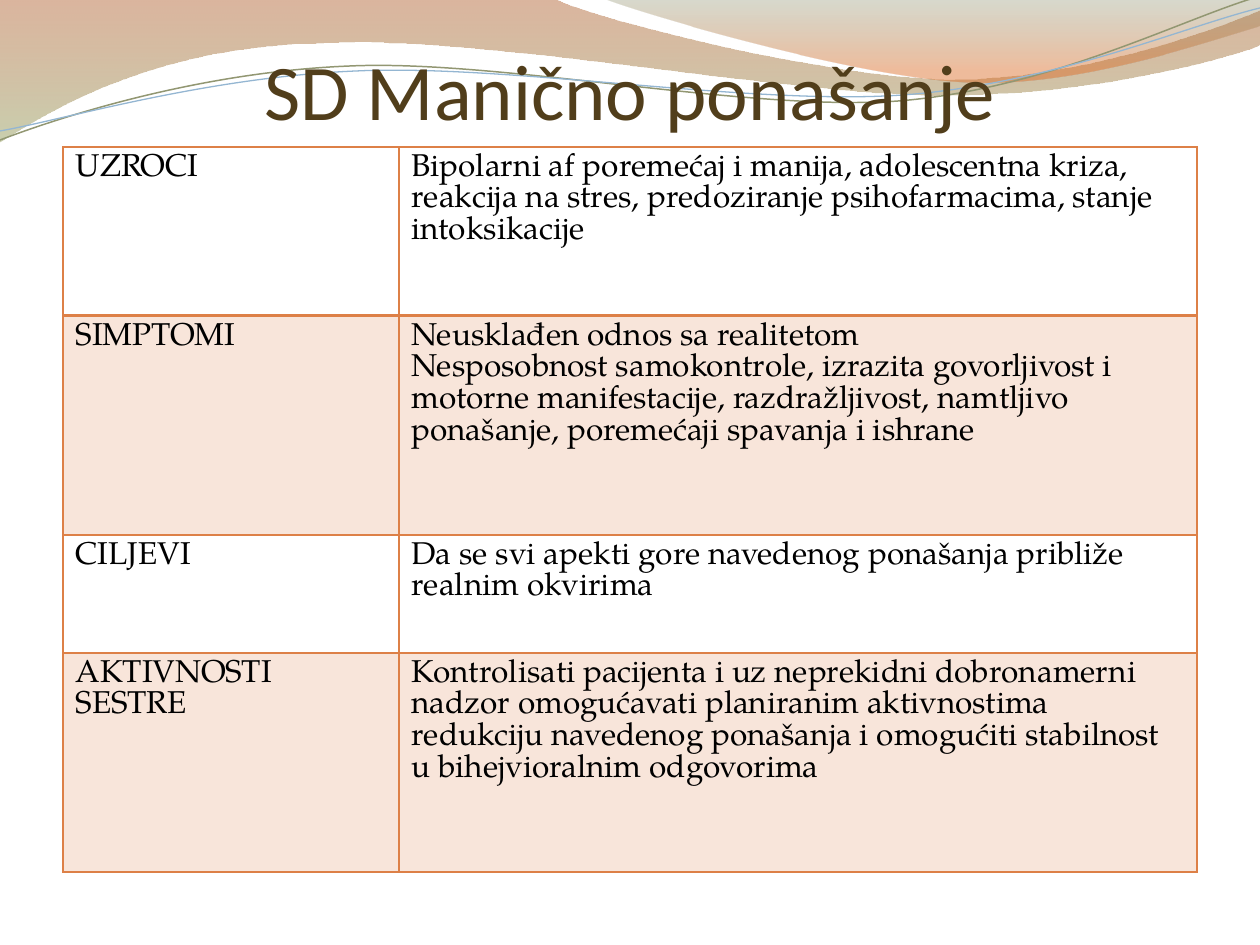
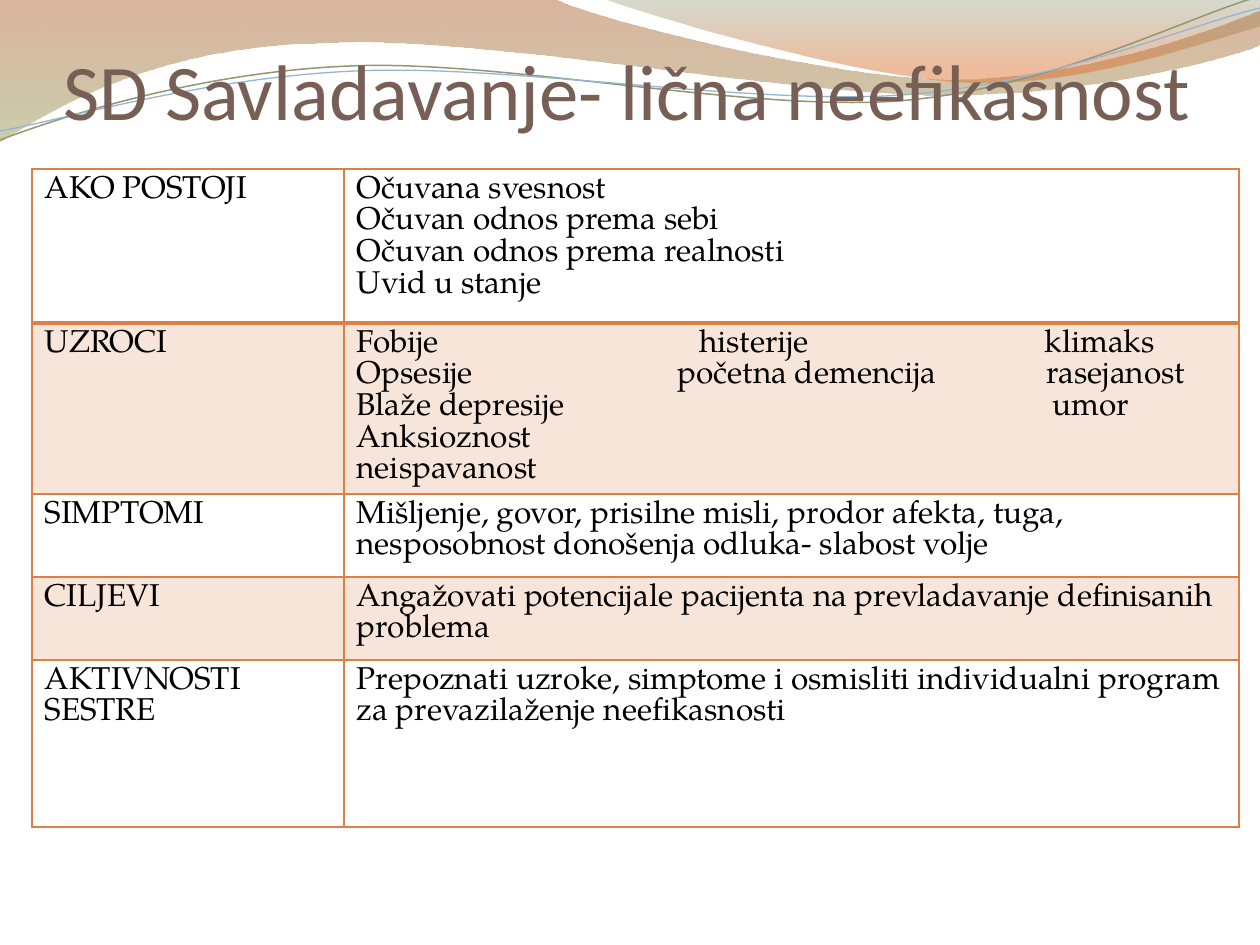
from lxml.etree import SubElement as Sub
from pptx import Presentation
from pptx.dml.color import RGBColor as RGB
from pptx.enum.text import MSO_ANCHOR as Anchor, MSO_AUTO_SIZE as Auto, PP_ALIGN as Align
from pptx.oxml.ns import qn
from pptx.util import Pt

PX = 914400 / 126
WIDE, HIGH = 1260, 945
HUES = {
    "page": "FFFFFF", "ink": "000000", "brown": "513E1B", "taupe": "775F55",
    "rust": "AF5C29", "moss": "9DA66B", "olive": "7D835B", "flame": "DD6B24",
    "sage": "929772", "sky": "94B6D2", "edge": "DD8047",
}
TITLE_FONT, BODY_FONT = "Calibri", "TeX Gyre Pagella"
TITLE_BOX = {"left": 63, "top": 32, "width": 1134, "height": 104}
TINT = 20

# A step of one point is a straight line, a step of three is a Bezier curve.
BANDS = [
    {"start": (0, 0),
     "steps": [[(554, -1)],
               [(600, 21), (837, 79), (955, 79)],
               [(1075, 79), (1207, 33), (1260, 11)],
               [(1261, 45)],
               [(1239, 55), (1096, 96), (940, 95)],
               [(784, 95), (481, 35), (324, 43)],
               [(163, 45), (58, 105), (-1, 142)],
               [(0, 0)]],
     "stops": [(0, "rust", 45), (100, "moss", 55)]},
    {"start": (604, -1),
     "steps": [[(641, 14), (859, 78), (969, 82)],
               [(1079, 87), (1211, 40), (1260, 26)],
               [(1260, 0)],
               [(604, -1)]],
     "stops": [(0, "olive", 30), (80, "flame", 45)]},
    {"start": (0, 140),
     "steps": [[(60, 117), (199, 72), (349, 66)],
               [(498, 59), (747, 112), (898, 101)],
               [(1049, 89), (1182, 19), (1257, -3)]],
     "line": ("sage", 0.85)},
    {"start": (0, 131),
     "steps": [[(59, 121), (206, 77), (357, 71)],
               [(508, 64), (752, 106), (903, 95)],
               [(1053, 84), (1186, 26), (1260, 8)]],
     "line": ("sky", 0.75)},
]

# A paragraph given as a tuple holds its first word, then (word, tab stop) pairs.
SLIDES = [
    {"title": "SD Manično ponašanje", "hue": "brown", "align": Align.CENTER,
     "at": (63, 147), "cols": (336, 798), "highs": (169, 219, 118, 219),
     "rows": [
         ("UZROCI", ["Bipolarni af poremećaj i manija, adolescentna kriza, reakcija na "
                     "stres, predoziranje psihofarmacima, stanje intoksikacije"]),
         ("SIMPTOMI", ["Neusklađen odnos sa realitetom",
                       "Nesposobnost samokontrole, izrazita govorljivost i motorne "
                       "manifestacije, razdražljivost, namtljivo ponašanje, poremećaji "
                       "spavanja i ishrane"]),
         ("CILJEVI", ["Da se svi apekti gore navedenog ponašanja približe realnim "
                      "okvirima"]),
         ("AKTIVNOSTI SESTRE", ["Kontrolisati pacijenta i uz neprekidni dobronamerni nadzor "
                                "omogućavati planiranim aktivnostima redukciju navedenog "
                                "ponašanja i omogućiti stabilnost u bihejvioralnim "
                                "odgovorima"]),
     ]},
    {"title": "SD Savladavanje- lična neefikasnost", "hue": "taupe", "align": Align.LEFT,
     "at": (32, 169), "cols": (312, 895), "highs": (154, 171, 83, 83, 167),
     "rows": [
         ("AKO POSTOJI", ["Očuvana svesnost", "Očuvan odnos prema sebi",
                          "Očuvan odnos prema realnosti", "Uvid u stanje"]),
         ("UZROCI", [("Fobije", ("histerije", 343), ("klimaks", 688)),
                     ("Opsesije", ("početna demencija", 321), ("rasejanost", 690)),
                     ("Blaže depresije", ("umor", 696)),
                     ("Anksioznost", ("neispavanost", 740))]),
         ("SIMPTOMI", ["Mišljenje, govor, prisilne misli, prodor afekta, tuga, "
                       "nesposobnost donošenja odluka- slabost volje"]),
         ("CILJEVI", ["Angažovati potencijale pacijenta na prevladavanje definisanih "
                      "problema"]),
         ("AKTIVNOSTI SESTRE", ["Prepoznati uzroke, simptome i osmisliti individualni program "
                                "za prevazilaženje neefikasnosti"]),
     ]},
]


def emu(px):
    return round(px * PX)


def hue(name):
    return RGB.from_string(HUES[name])


def put(thing, **vals):
    for key, val in vals.items():
        setattr(thing, key, val)


def fade(node, shares):
    """Set the opacity, in percent, of each colour under node."""
    for clr, share in zip(node.iter(qn("a:srgbClr")), shares):
        Sub(clr, qn("a:alpha"), val=str(share * 1000))


def bend(shape, steps):
    """Join the straight legs of each three-point step into one Bezier curve."""
    legs = iter(list(shape.element.iter(qn("a:lnTo"))))
    for step in steps:
        group = [next(legs) for _ in step]
        if len(step) == 3:
            head, *rest = group
            head.tag = qn("a:cubicBezTo")
            for leg in rest:
                head.append(leg[0])
                leg.getparent().remove(leg)


def draw_band(slide, band):
    steps = band["steps"]
    pen = slide.shapes.build_freeform(*band["start"], scale=PX)
    pen.add_line_segments([dot for step in steps for dot in step],
                          close="stops" in band)
    shape = pen.convert_to_shape()
    bend(shape, steps)
    shape.shadow.inherit = False
    if "stops" in band:
        shape.line.fill.background()
        shape.fill.gradient()
        shape.fill.gradient_angle = 270
        for stop, (spot, name, _) in zip(shape.fill.gradient_stops, band["stops"]):
            stop.position = spot / 100
            stop.color.rgb = hue(name)
        fade(shape.element.spPr, [share for _, _, share in band["stops"]])
    else:
        name, size = band["line"]
        shape.fill.background()
        shape.line.color.rgb = hue(name)
        shape.line.width = Pt(size)
    return shape


def dress(slide, layout):
    """Draw the bands and move them to the layout, behind its placeholders."""
    for i, band in enumerate(BANDS):
        layout.shapes.element.insert(2 + i, draw_band(slide, band).element)


def set_title(slide, page):
    title = slide.shapes.title
    put(title, **{key: emu(val) for key, val in TITLE_BOX.items()})
    frame = title.text_frame
    put(frame, text=page["title"], word_wrap=True, auto_size=Auto.NONE,
        vertical_anchor=Anchor.BOTTOM, margin_left=0, margin_right=0,
        margin_top=emu(6), margin_bottom=0)
    para = frame.paragraphs[0]
    para.alignment = page["align"]
    put(para.runs[0].font, name=TITLE_FONT, size=Pt(45))
    para.runs[0].font.color.rgb = hue(page["hue"])


def write(cell, paras):
    frame = cell.text_frame
    for i, text in enumerate(paras):
        para = frame.add_paragraph() if i else frame.paragraphs[0]
        run = para.add_run()
        if isinstance(text, tuple):
            first, *rest = text
            text = "\t".join([first, *(word for word, _ in rest)])
            tabs = Sub(para._p.get_or_add_pPr(), qn("a:tabLst"))
            for _, stop in rest:
                Sub(tabs, qn("a:tab"), pos=str(emu(stop)), algn="l")
        run.text = text
        put(run.font, name=BODY_FONT, size=Pt(18))
        run.font.color.rgb = hue("ink")


def paint(cell, row):
    """Tint every second row and rule the cell, thicker under the first row."""
    if row % 2:
        cell.fill.solid()
        cell.fill.fore_color.rgb = hue("edge")
    else:
        cell.fill.background()
    props = cell._tc.get_or_add_tcPr()
    fade(props, [TINT])
    thick = {("B", 0), ("T", 1)}
    for i, side in enumerate("LRTB"):
        size = 2 if (side, row) in thick else 1
        line = Sub(props, qn("a:ln" + side), w=str(Pt(size)))
        Sub(Sub(line, qn("a:solidFill")), qn("a:srgbClr"), val=HUES["edge"])
        props.insert(i, line)


def add_grid(slide, page):
    rows, cols, highs = page["rows"], page["cols"], page["highs"]
    box = [emu(n) for n in (*page["at"], sum(cols), sum(highs))]
    grid = slide.shapes.add_table(len(rows), len(cols), *box).table
    put(grid, first_row=False, horz_banding=False)
    for col, wide in zip(grid.columns, cols):
        col.width = emu(wide)
    for r, (label, paras) in enumerate(rows):
        grid.rows[r].height = emu(highs[r])
        for c, texts in enumerate(([label], paras)):
            cell = grid.cell(r, c)
            write(cell, texts)
            paint(cell, r)


def main():
    deck = Presentation()
    put(deck, slide_width=emu(WIDE), slide_height=emu(HIGH))
    layout = deck.slide_layouts[5]
    back = deck.slide_master.background.fill
    back.solid()
    back.fore_color.rgb = hue("page")
    for i, page in enumerate(SLIDES):
        slide = deck.slides.add_slide(layout)
        if i == 0:
            dress(slide, layout)
        set_title(slide, page)
        add_grid(slide, page)
    deck.save("out.pptx")


if __name__ == "__main__":
    main()
